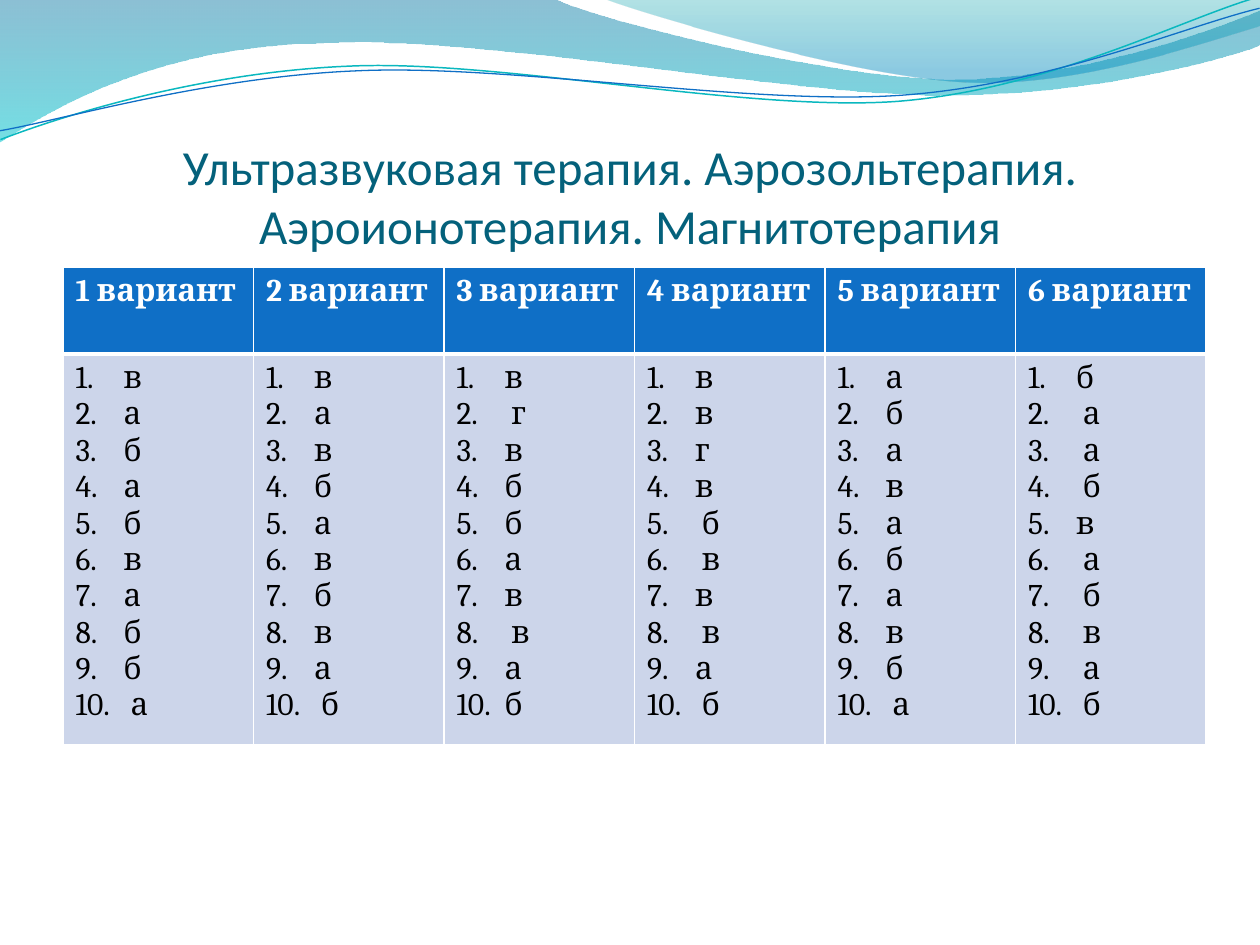
from lxml.etree import SubElement
from pptx import Presentation
from pptx.dml.color import RGBColor
from pptx.enum.text import MSO_ANCHOR, PP_ALIGN
from pptx.oxml import parse_xml
from pptx.oxml.ns import nsdecls, qn
from pptx.util import Pt

PX = 914400 / 126
COLORS = {
    "deep": "0074A1", "cyan": "00C6CF", "teal": "00A1A9", "sky": "008BBF",
    "aqua": "0AB8BF", "blue": "0F6FC6", "title": "04617B",
    "pale": "CCD5EA", "white": "FFFFFF", "black": "000000",
}
# Each curve is a start point, then points (2 numbers) or Bezier parts (6 numbers)
WAVES = [
    ([(0, 0), (554, -1), (600, 21, 837, 79, 955, 79), (1074, 79, 1207, 33, 1260, 11),
      (1261, 45), (1239, 55, 1096, 96, 940, 95), (784, 95, 481, 35, 324, 43),
      (163, 45, 58, 105, -1, 142)],
     [(0, "deep", 45), (1, "cyan", 55)]),
    ([(604, -1), (641, 14, 859, 78, 969, 82), (1079, 87, 1211, 40, 1260, 26), (1260, 0)],
     [(0, "teal", 30), (0.8, "sky", 45)]),
]
LINES = [
    ([(-2, 110), (58, 90, 199, 52, 350, 53), (499, 53, 745, 118, 896, 114),
      (1049, 109, 1184, 45, 1260, 27)], "aqua", 0.85),
    ([(-2, 101), (57, 94, 207, 57, 357, 58), (509, 58, 750, 112, 902, 108),
      (1052, 104, 1188, 52, 1262, 38)], "blue", 0.75),
]
TILT = 357.3
TITLE = "Ультразвуковая терапия. Аэрозольтерапия. Аэроионотерапия. Магнитотерапия"
ANSWERS = [
    "в,а,б,а,б,в,а,б,б, а",
    "в,а,в,б,а,в,б,в,а, б",
    "в, г,в,б,б,а,в, в,а,б",
    "в,в,г,в, б, в,в, в,а, б",
    "а,б,а,в,а,б,а,в,б, а",
    "б, а, а, б,в, а, б, в, а, б",
]


def px(n):
    return round(n * PX)


def color(name):
    return RGBColor.from_string(COLORS[name])


def style(par, font, size, name, bold=False):
    for run in par.runs:
        run.font.name, run.font.size, run.font.bold = font, Pt(size), bold
        run.font.color.rgb = color(name)


def outline(slide, box, curve, close):
    """Draw straight parts, then bend each Bezier part's three steps into one."""
    x, y = box[:2]
    pts = [(px(x + part[i]), px(y + part[i + 1]))
           for part in curve for i in range(0, len(part), 2)]
    pen = slide.shapes.build_freeform(*pts[0], scale=1.0)
    pen.add_line_segments(pts[1:], close=close)
    shape = pen.convert_to_shape()
    shape.shadow.inherit = False
    steps = iter(list(shape._element.iter(qn("a:lnTo"))))
    for part in curve[1:]:
        step = next(steps)
        if len(part) == 6:
            step.tag = qn("a:cubicBezTo")
            for _ in range(2):
                extra = next(steps)
                step.append(extra[0])
                extra.getparent().remove(extra)
    return shape


def add_waves(slide, box):
    # Translucent bands
    for curve, stops in WAVES:
        shape = outline(slide, box, curve, True)
        shape.line.fill.background()
        fill = shape.fill
        fill.gradient()
        fill.gradient_angle = 270
        for stop, (pos, name, alpha) in zip(fill.gradient_stops, stops):
            stop.position = pos
            stop.color.rgb = color(name)
        marks = shape._element.spPr.iter(qn("a:srgbClr"))
        for mark, (pos, name, alpha) in zip(marks, stops):
            SubElement(mark, qn("a:alpha"), val=str(alpha * 1000))
    # Thin tilted curves
    for curve, name, width in LINES:
        shape = outline(slide, box, curve, False)
        shape.rotation = TILT
        shape.fill.background()
        shape.line.color.rgb = color(name)
        shape.line.width = Pt(width)


def add_title(slide, box):
    frame = slide.shapes.add_textbox(*map(px, box)).text_frame
    frame.word_wrap = True
    frame.vertical_anchor = MSO_ANCHOR.BOTTOM
    frame.margin_left = frame.margin_right = frame.margin_bottom = 0
    frame.text = TITLE
    par = frame.paragraphs[0]
    par.alignment = PP_ALIGN.CENTER
    style(par, "Calibri", 28, "title")


def paint(cell, name, top, bottom):
    """Fill a cell and give it white borders."""
    cell.fill.solid()
    cell.fill.fore_color.rgb = color(name)
    sides = [("L", 1), ("R", 1), ("T", top), ("B", bottom)]
    for i, (side, width) in enumerate(sides):
        cell._tc.get_or_add_tcPr().insert(i, parse_xml(
            f'<a:ln{side} {nsdecls("a")} w="{Pt(width)}"><a:solidFill>'
            f'<a:srgbClr val="{COLORS["white"]}"/></a:solidFill></a:ln{side}>'))


def number(par):
    props = par._p.get_or_add_pPr()
    props.set("marL", str(px(48)))
    props.set("indent", str(-px(48)))
    SubElement(props, qn("a:buAutoNum"), type="arabicPeriod")


def add_answers(slide, box, head):
    count = len(ANSWERS)
    table = slide.shapes.add_table(2, count, *map(px, box)).table
    table.horz_banding = False
    table.rows[0].height = px(head)
    table.rows[1].height = px(box[3] - head)
    for i, keys in enumerate(ANSWERS):
        table.columns[i].width = px(box[2] / count)
        # Heading
        cell = table.cell(0, i)
        cell.text_frame.text = f"{i + 1} вариант"
        style(cell.text_frame.paragraphs[0], "Cambria", 18, "white", True)
        paint(cell, "blue", 1, 3)
        # Numbered answers
        cell = table.cell(1, i)
        cell.text_frame.text = "\n".join(keys.split(","))
        for par in cell.text_frame.paragraphs:
            number(par)
            style(par, "Cambria", 18, "black")
        paint(cell, "pale", 3, 1)


def main():
    deck = Presentation()
    deck.slide_width, deck.slide_height = px(1260), px(945)
    slide = deck.slides.add_slide(deck.slide_layouts[6])
    add_waves(slide, (0, 0, 1260, 142))
    add_title(slide, (63, 97, 1134, 157))
    add_answers(slide, (63, 267, 1143, 473), 87)
    deck.save("out.pptx")


if __name__ == "__main__":
    main()
